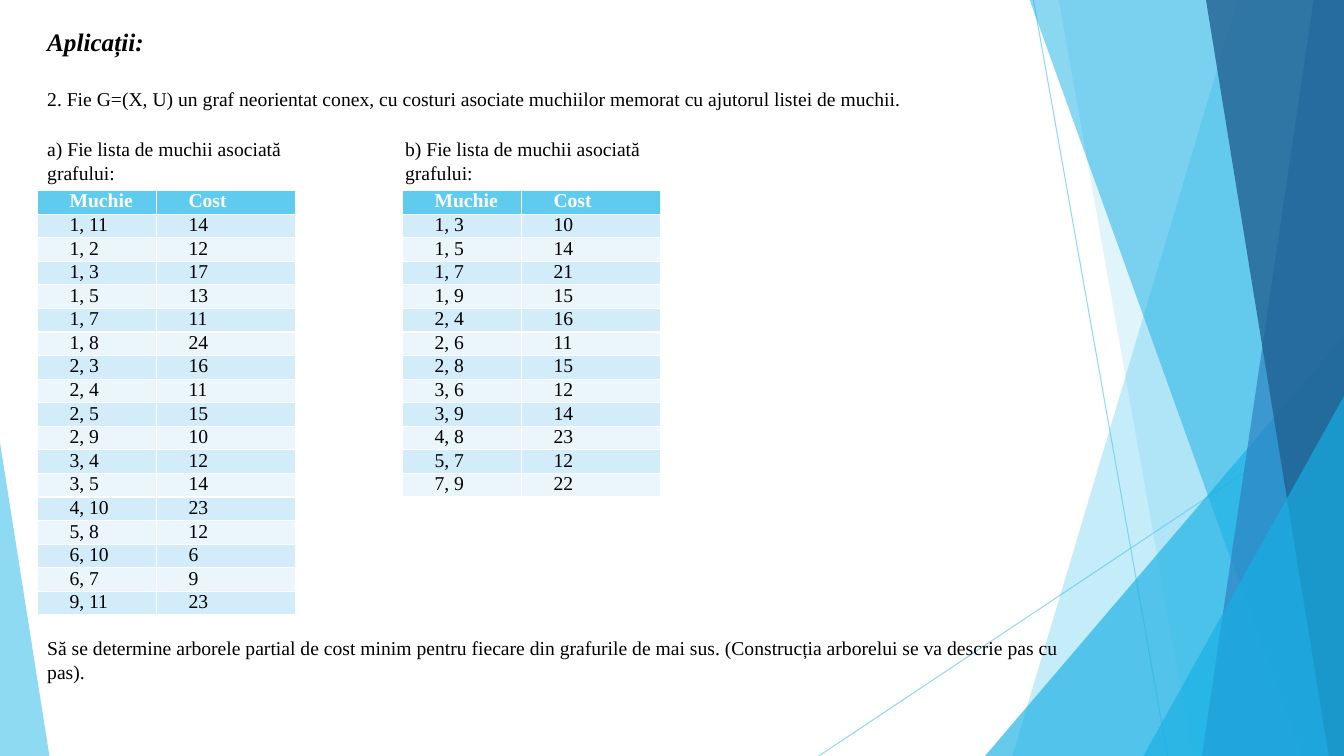
from lxml.etree import SubElement
from pptx import Presentation
from pptx.dml.color import RGBColor
from pptx.enum.shapes import MSO_CONNECTOR, MSO_SHAPE
from pptx.enum.text import MSO_AUTO_SIZE, PP_ALIGN
from pptx.oxml.ns import qn
from pptx.util import Inches, Pt


def color(text):
    return RGBColor.from_string(text)


def assign(target, values):
    for name, value in values.items():
        setattr(target, name, value)


class Page:
    font = "Times New Roman"
    size = Pt(14)
    sky, cyan, blue, navy = "5FCBEF", "17B0E4", "2E83C3", "226292"
    bands = "D2ECF9", "EAF6FC"

    def __init__(self, slide):
        self.shapes = slide.shapes

    def fade(self, fill, alpha):
        tint = fill._xPr.find(".//" + qn("a:srgbClr"))
        SubElement(tint, qn("a:alpha"), val=str(alpha * 1000))

    def paint(self, shape, tone, alpha):
        shape.shadow.inherit = False
        shape.fill.solid()
        shape.fill.fore_color.rgb = color(tone)
        shape.line.fill.background()
        self.fade(shape.fill, alpha)

    def line(self, *ends):
        link = self.shapes.add_connector(MSO_CONNECTOR.STRAIGHT, *map(Inches, ends))
        link.line.width = Pt(0.75)
        link.line.color.rgb = color(self.sky)
        self.fade(link.line.fill, 70)
        SubElement(link._element.spPr, qn("a:effectLst"))

    def shard(self, top, base, tone, alpha):
        """Sloping left edge from top to base, filled out to the right edge."""
        high, low, right = Inches(-0.01), Inches(7.5), Inches(13.33)
        form = self.shapes.build_freeform(Inches(top), high, scale=1.0)
        form.add_line_segments(
            [(right, high), (right, low), (Inches(base), low)], close=True)
        self.paint(form.convert_to_shape(), tone, alpha)

    def wedge(self, box, peak, tone, alpha):
        shape = self.shapes.add_shape(MSO_SHAPE.ISOSCELES_TRIANGLE, *map(Inches, box))
        shape.adjustments[0] = peak
        self.paint(shape, tone, alpha)

    def put(self, para, text, tone="000000", **style):
        run = para.add_run()
        run.text = text
        run.font.color.rgb = color(tone)
        assign(run.font, {"name": self.font, "size": self.size, **style})

    def text(self, box, text, **style):
        frame = self.shapes.add_textbox(*map(Inches, box)).text_frame
        assign(frame, {"word_wrap": True, "auto_size": MSO_AUTO_SIZE.SHAPE_TO_FIT_TEXT})
        self.put(frame.paragraphs[0], text, **style)
        return frame

    def cell(self, cell, text, fill, **style):
        cell.fill.solid()
        cell.fill.fore_color.rgb = color(fill)
        assign(cell, {"margin_left": Inches(0.07), "margin_right": Inches(0.07),
                      "margin_top": 0, "margin_bottom": 0})
        para = cell.text_frame.paragraphs[0]
        para.alignment = PP_ALIGN.JUSTIFY
        form = para._p.get_or_add_pPr()
        form.set("marL", "0")
        form.set("indent", str(Inches(0.25)))
        self.put(para, text, **style)

    def table(self, left, edges):
        count = len(edges) + 1
        high = Inches(4.2 / 18)
        grid = self.shapes.add_table(count, 2, Inches(left), Inches(1.89),
                                     Inches(2.56), high * count).table
        for col, width in zip(grid.columns, (1.18, 1.38)):
            col.width = Inches(width)
        for row, pair in enumerate([("Muchie", "Cost")] + edges):
            grid.rows[row].height = high
            head = row == 0
            for col, value in enumerate(pair):
                self.cell(grid.cell(row, col), str(value),
                          self.sky if head else self.bands[(row - 1) % 2],
                          tone="FFFFFF" if head else "000000", bold=head)


def main():
    deck = Presentation()
    assign(deck, {"slide_width": Inches(13.33), "slide_height": Inches(7.5)})
    page = Page(deck.slides.add_slide(deck.slide_layouts[6]))

    # Backdrop
    page.line(10.25, 0, 11.58, 7.5)
    page.line(13.33, 4.03, 8.12, 7.5)
    page.shard(12.28, 10.04, page.sky, 36)
    page.shard(10.5, 11.83, page.sky, 20)
    page.wedge((9.77, 3.33, 3.56, 4.17), 1, page.cyan, 66)
    page.shard(10.21, 12.91, page.cyan, 50)
    page.shard(13.03, 11.92, page.blue, 70)
    page.shard(11.96, 13.18, page.navy, 80)
    page.wedge((11.34, 3.93, 1.99, 3.57), 1, page.cyan, 66)
    page.wedge((0, 4.39, 0.49, 3.11), 0, page.sky, 70)

    # Title and task
    frame = page.text((0.37, 0.21, 9.74, 1.25), "Aplicații:",
                      size=Pt(18), bold=True, italic=True)
    task = frame.add_paragraph()
    task.space_before = Pt(22)
    page.put(task, "2. Fie G=(X, U) un graf neorientat conex, cu costuri asociate "
                   "muchiilor memorat cu ajutorul listei de muchii.")
    page.text((0.37, 6.26, 10.61, 0.57),
              "Să se determine arborele partial de cost minim pentru fiecare din grafurile "
              "de mai sus. (Construcția arborelui se va descrie pas cu pas).")

    # Edge lists
    page.table(0.37, [
        ("1, 11", 14), ("1, 2", 12), ("1, 3", 17), ("1, 5", 13), ("1, 7", 11),
        ("1, 8", 24), ("2, 3", 16), ("2, 4", 11), ("2, 5", 15), ("2, 9", 10),
        ("3, 4", 12), ("3, 5", 14), ("4, 10", 23), ("5, 8", 12), ("6, 10", 6),
        ("6, 7", 9), ("9, 11", 23)])
    page.table(3.99, [
        ("1, 3", 10), ("1, 5", 14), ("1, 7", 21), ("1, 9", 15), ("2, 4", 16),
        ("2, 6", 11), ("2, 8", 15), ("3, 6", 12), ("3, 9", 14), ("4, 8", 23),
        ("5, 7", 12), ("7, 9", 22)])
    for left, mark in ((0.37, "a"), (3.92, "b")):
        page.text((left, 1.31, 2.64, 0.57), f"{mark}) Fie lista de muchii asociată grafului:")

    deck.save("out.pptx")


if __name__ == "__main__":
    main()
